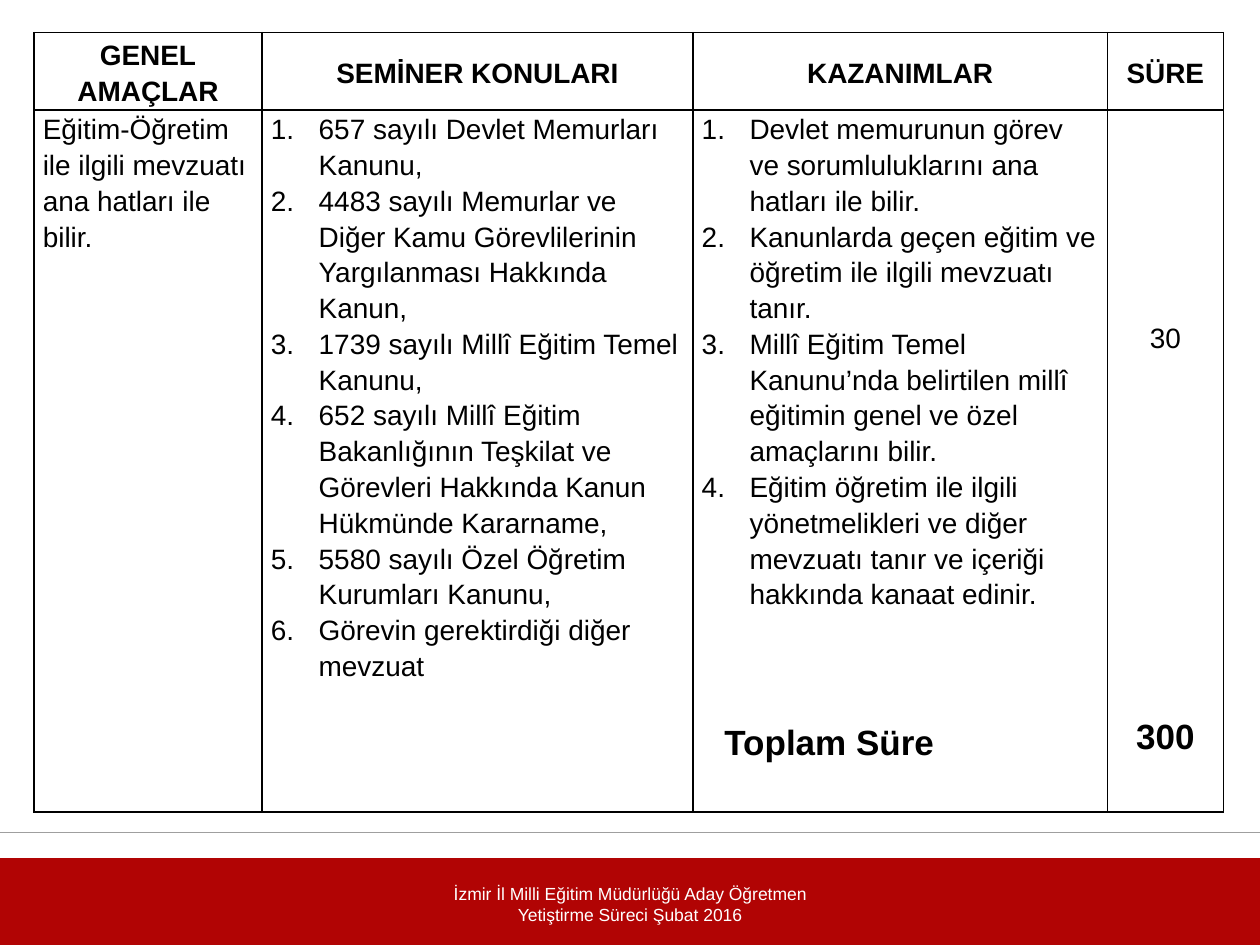
from lxml import etree
from pptx import Presentation
from pptx.dml.color import RGBColor
from pptx.enum.shapes import MSO_CONNECTOR, MSO_SHAPE
from pptx.enum.text import MSO_ANCHOR, PP_ALIGN
from pptx.oxml.ns import qn
from pptx.util import Inches, Pt

LEFT, CENTER = PP_ALIGN.LEFT, PP_ALIGN.CENTER
TOP, MIDDLE = MSO_ANCHOR.TOP, MSO_ANCHOR.MIDDLE
STRAIGHT, RECTANGLE = MSO_CONNECTOR.STRAIGHT, MSO_SHAPE.RECTANGLE
FONT = "Arial"
BLACK, WHITE, RED, GRAY = "000000", "FFFFFF", "B10404", "9F9F9F"

HEADERS = ["GENEL\vAMAÇLAR", "SEMİNER KONULARI", "KAZANIMLAR", "SÜRE"]
COLUMN_WIDTHS = [1.81, 3.42, 3.29, 0.92]
ROW_HEIGHTS = [0.57, 5.57]
AIM = "Eğitim-Öğretim ile ilgili mevzuatı ana hatları ile bilir."
TOPICS = [
    "657 sayılı Devlet Memurları Kanunu,",
    "4483 sayılı Memurlar ve Diğer Kamu Görevlilerinin Yargılanması Hakkında Kanun,",
    "1739 sayılı Millî Eğitim Temel Kanunu,",
    "652 sayılı Millî Eğitim Bakanlığının Teşkilat ve Görevleri Hakkında Kanun Hükmünde Kararname,",
    "5580 sayılı Özel Öğretim Kurumları Kanunu,",
    "Görevin gerektirdiği diğer mevzuat",
]
OUTCOMES = [
    "Devlet memurunun görev ve sorumluluklarını ana hatları ile bilir.",
    "Kanunlarda geçen eğitim ve öğretim ile ilgili mevzuatı tanır.",
    "Millî Eğitim Temel Kanunu’nda belirtilen millî eğitimin genel ve özel amaçlarını bilir.",
    "Eğitim öğretim ile ilgili yönetmelikleri ve diğer mevzuatı tanır ve içeriği hakkında kanaat edinir.",
]
FOOTER = "İzmir İl Milli Eğitim Müdürlüğü Aday Öğretmen Yetiştirme Süreci Şubat 2016"


def color(value):
    """Turn a hex string into a colour."""
    return RGBColor.from_string(value)


def set_font(paragraph, size, value, bold=False):
    """Set the font of a whole paragraph."""
    font = paragraph.font
    font.name, font.size, font.bold = FONT, Pt(size), bold
    font.color.rgb = color(value)


def add_paragraph(cell, text, size=16, bold=False, align=LEFT, before=0, indent=0, numbered=False):
    """Write text in the cell's empty first paragraph or in a new one."""
    frame = cell.text_frame
    paragraph = frame.add_paragraph() if frame.text else frame.paragraphs[0]
    paragraph.text = text
    properties = paragraph._p.get_or_add_pPr()
    properties.set("marL", str(Inches(indent)))
    properties.set("indent", str(-Inches(indent) if numbered else 0))
    if numbered:
        etree.SubElement(properties, qn("a:buFont"), typeface="+mj-lt")
        etree.SubElement(properties, qn("a:buAutoNum"), type="arabicPeriod")
    paragraph.alignment = align
    paragraph.line_spacing = 1.15
    if before:
        paragraph.space_before = Pt(before)
    set_font(paragraph, size, BLACK, bold)


def add_numbered_list(cell, items):
    """Write the items as a numbered list."""
    for item in items:
        add_paragraph(cell, item, indent=0.38, numbered=True)


def format_cell(cell, anchor):
    """Give a cell its margins, black borders and clear fill."""
    cell.margin_left = cell.margin_right = Inches(0.07)
    cell.margin_top = cell.margin_bottom = 0
    cell.vertical_anchor = anchor
    properties = cell._tc.get_or_add_tcPr()
    for side in ("lnL", "lnR", "lnT", "lnB"):
        line = etree.SubElement(properties, qn(f"a:{side}"), w=str(Pt(1)))
        fill = etree.SubElement(line, qn("a:solidFill"))
        etree.SubElement(fill, qn("a:srgbClr"), val=BLACK)
    cell.fill.background()


def add_seminar_table(slide, left, top, width, height):
    """Add the table of aims, topics, outcomes and hours."""
    frame = slide.shapes.add_table(
        len(ROW_HEIGHTS), len(HEADERS), Inches(left), Inches(top), Inches(width), Inches(height))
    table = frame.table
    table.first_row = table.horz_banding = False
    for column, column_width in zip(table.columns, COLUMN_WIDTHS):
        column.width = Inches(column_width)
    for row, row_height in zip(table.rows, ROW_HEIGHTS):
        row.height = Inches(row_height)
    for index, header in enumerate(HEADERS):
        format_cell(table.cell(0, index), MIDDLE)
        format_cell(table.cell(1, index), TOP)
        add_paragraph(table.cell(0, index), header, bold=True, align=CENTER)

    aim, topics, outcomes, hours = [table.cell(1, index) for index in range(len(HEADERS))]
    add_paragraph(aim, AIM)
    add_numbered_list(topics, TOPICS)
    add_numbered_list(outcomes, OUTCOMES)
    add_paragraph(outcomes, "Toplam Süre", size=20, bold=True, before=61, indent=0.18)
    hours.margin_top = Inches(1.66)
    add_paragraph(hours, "30", align=CENTER)
    add_paragraph(hours, "300", size=20, bold=True, align=CENTER, before=204)


def add_footer(slide, left, top, width, height):
    """Add the thin rule, the red band and its centred caption."""
    rule = slide.shapes.add_connector(
        STRAIGHT, Inches(left), Inches(top), Inches(left + width), Inches(top))
    rule.line.color.rgb = color(GRAY)
    rule.line.width = Pt(0.75)
    etree.SubElement(rule._element.spPr, qn("a:effectLst"))

    band_top = top + 0.2
    band = slide.shapes.add_shape(
        RECTANGLE, Inches(left), Inches(band_top), Inches(width), Inches(height - 0.2))
    band.shadow.inherit = False
    band.fill.solid()
    band.fill.fore_color.rgb = color(RED)
    band.line.fill.background()

    caption_width = 3.17
    caption = slide.shapes.add_textbox(
        Inches(left + (width - caption_width) / 2), Inches(band_top + 0.15),
        Inches(caption_width), Inches(0.27))
    caption.text_frame.word_wrap = True
    paragraph = caption.text_frame.paragraphs[0]
    paragraph.text = FOOTER
    paragraph.alignment = CENTER
    set_font(paragraph, 10, WHITE)


def main():
    """Build and save the presentation."""
    presentation = Presentation()
    presentation.slide_width, presentation.slide_height = Inches(10), Inches(7.5)
    slide = presentation.slides.add_slide(presentation.slide_layouts[6])
    add_footer(slide, 0, 6.61, 10, 0.89)
    add_seminar_table(slide, 0.27, 0.26, sum(COLUMN_WIDTHS), sum(ROW_HEIGHTS))
    presentation.save("out.pptx")


if __name__ == "__main__":
    main()
